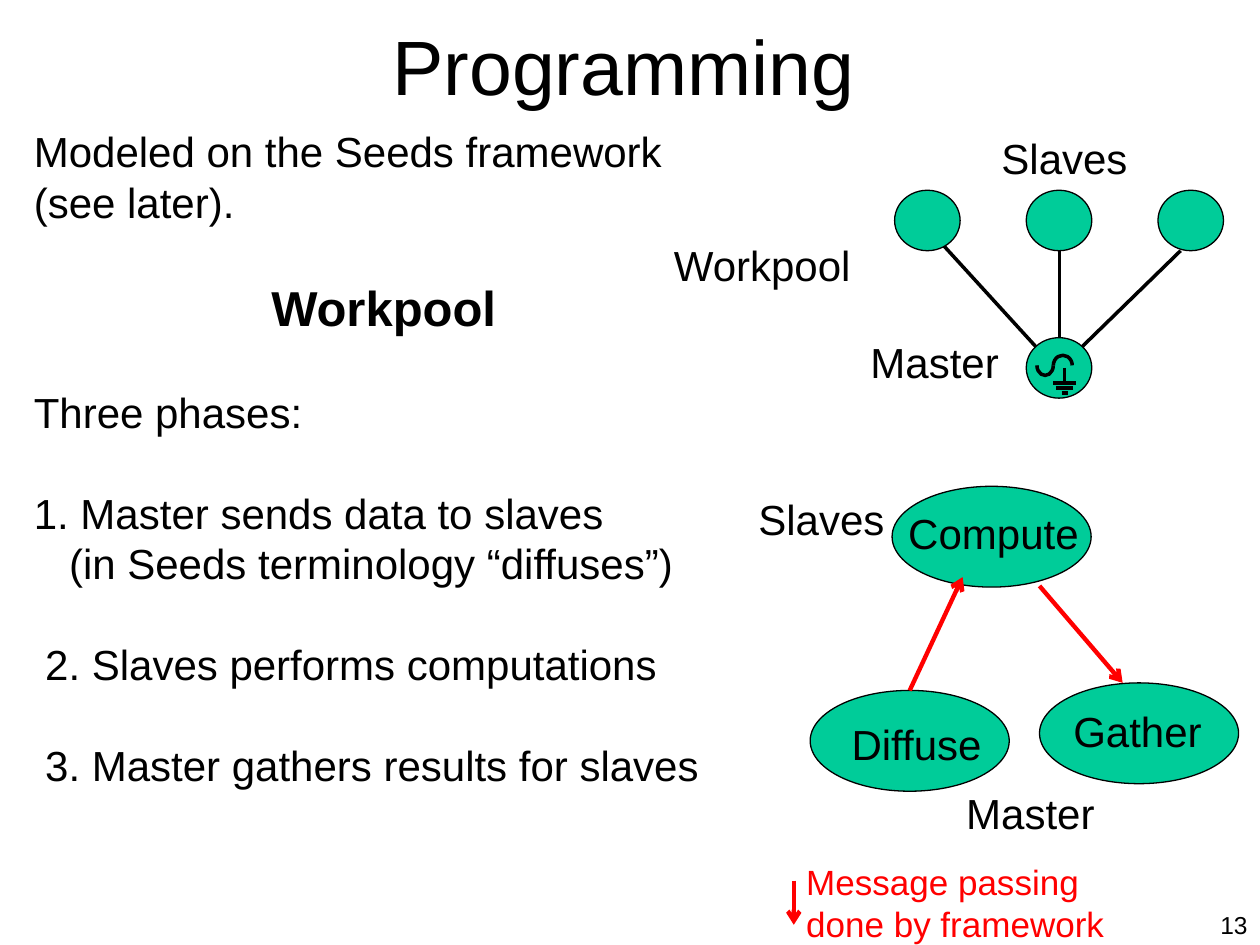
import pptx
import pptx.util
import pptx.dml.color
import pptx.enum.shapes
import pptx.enum.text
import pptx.oxml.ns
from lxml import etree

Inches, Pt = pptx.util.Inches, pptx.util.Pt
SHAPE = pptx.enum.shapes.MSO_SHAPE
ALIGN = pptx.enum.text.PP_ALIGN
ANCHOR = pptx.enum.text.MSO_ANCHOR
qn = pptx.oxml.ns.qn

WIDTH, HEIGHT = 10, 7.5
FONT = "Arial"
BLACK, RED, GREEN = "000000", "FF0000", "00CC99"
LINE_RATIO = 1.2
BODY_SIZE = 24

TITLE = "Programming"
BODY = [
    {"text": "Modeled on the Seeds framework (see later)."},
    {"text": "Workpool", "size": 28, "bold": True, "align": ALIGN.CENTER, "gap": 1},
    {"text": "Three phases:", "gap": 1},
    {"text": "1. Master sends data to slaves", "gap": 1},
    {"text": "(in Seeds terminology “diffuses”)", "indent": 0.28},
    {"text": "2. Slaves performs computations", "indent": 0.09, "gap": 1},
    {"text": "3. Master gathers results for slaves", "indent": 0.09, "gap": 1},
]
LABELS = [
    ("Slaves", 7.85, 1, 1.47),
    ("Workpool", 5.25, 1.85, 1.62),
    ("Master", 6.81, 2.62, 1.32),
    ("Slaves", 5.92, 3.87, 1.21),
    ("Master", 7.57, 6.2, 1.23),
]
PHASES = [
    ("Diffuse", (6.43, 5.48), (6.66, 5.65)),
    ("Compute", (7.08, 3.86), (7.11, 3.98)),
    ("Gather", (8.25, 5.42), (8.42, 5.55)),
]
PHASE_SIZE = (1.58, 0.8)
MESSAGE = "Message passing done by framework"
MESSAGE_ARROWS = [
    ((7.22, 5.48), (7.64, 4.58)),
    ((8.25, 4.65), (8.91, 5.42)),
    ((6.3, 6.99), (6.3, 7.34)),
]
NODE_SIZE = (0.52, 0.48)
NODE_LEFT, NODE_STEP, SLAVE_TOP, MASTER_TOP = 7.1, 1.045, 1.51, 2.68
LINKS = [
    ((7.49, 1.95), (8.22, 2.75)),
    ((8.41, 1.99), (8.41, 2.68)),
    ((9.37, 1.99), (8.59, 2.75)),
]
WAVES = [(8.23, 0.13, (0, 108)), (8.36, 0.15, (108, 0))]
GROUND_X, GROUND_TOP, GROUND_Y, GROUND_STEP = 8.45, 2.92, 3.04, 0.04
GROUND_BARS = [0.18, 0.14, 0.05]


def rgb(value):
    return pptx.dml.color.RGBColor.from_string(value)


def write(p, text, size=BODY_SIZE, color=BLACK, bold=False, align=ALIGN.LEFT, gap=0, indent=0):
    p.alignment = align
    p.line_spacing = Pt(size * LINE_RATIO)
    p.space_before = Pt(gap * BODY_SIZE * LINE_RATIO)
    p.space_after = Pt(0)
    if indent:
        p._p.get_or_add_pPr().set("marL", str(Inches(indent)))
    r = p.add_run()
    r.text = text
    r.font.name, r.font.size, r.font.bold = FONT, Pt(size), bold
    r.font.color.rgb = rgb(color)


def add_text(s, box, paragraphs):
    tf = s.shapes.add_textbox(*map(Inches, box)).text_frame
    tf.word_wrap = True
    for i, item in enumerate(paragraphs):
        write(tf.add_paragraph() if i else tf.paragraphs[0], **item)


def add_ellipse(s, at, size):
    sp = s.shapes.add_shape(SHAPE.OVAL, *map(Inches, (*at, *size)))
    sp.shadow.inherit = False
    sp.fill.solid()
    sp.fill.fore_color.rgb = rgb(GREEN)
    sp.line.color.rgb = rgb(BLACK)
    sp.line.width = Pt(0.75)


def add_arc(s, left, width, angles):
    sp = s.shapes.add_shape(SHAPE.ARC, *map(Inches, (left, 2.82, width, 0.16)))
    sp.shadow.inherit = False
    sp.adjustments[0], sp.adjustments[1] = angles
    sp.fill.background()
    sp.line.color.rgb = rgb(BLACK)
    sp.line.width = Pt(2)


def add_line(s, start, end, color=BLACK, width=2, arrow=False):
    kind = pptx.enum.shapes.MSO_CONNECTOR.STRAIGHT
    sp = s.shapes.add_connector(kind, *map(Inches, (*start, *end)))
    sp.line.color.rgb = rgb(color)
    sp.line.width = Pt(width)
    if arrow:
        etree.SubElement(sp.line._get_or_add_ln(), qn("a:tailEnd"), type="arrow")
    etree.SubElement(sp._element.spPr, qn("a:effectLst"))


def add_title(s):
    sp = s.shapes.title
    sp.left, sp.top, sp.width, sp.height = map(Inches, (0.7, -0.11, 8.5, 1.25))
    sp.text_frame.vertical_anchor = ANCHOR.MIDDLE
    write(sp.text_frame.paragraphs[0], TITLE, size=44, align=ALIGN.CENTER)


def add_workpool(s):
    for start, end in LINKS:
        add_line(s, start, end)
    for i in range(3):
        add_ellipse(s, (NODE_LEFT + i * NODE_STEP, SLAVE_TOP), NODE_SIZE)
    add_ellipse(s, (NODE_LEFT + NODE_STEP, MASTER_TOP), NODE_SIZE)
    for wave in WAVES:
        add_arc(s, *wave)
    add_line(s, (GROUND_X, GROUND_TOP), (GROUND_X, GROUND_Y))
    for i, bar in enumerate(GROUND_BARS):
        y = GROUND_Y + i * GROUND_STEP
        add_line(s, (GROUND_X - bar / 2, y), (GROUND_X + bar / 2, y))


def add_phases(s):
    for text, at, label_at in PHASES:
        add_ellipse(s, at, PHASE_SIZE)
        add_text(s, (*label_at, PHASE_SIZE[0], 0.5), [{"text": text}])
    for start, end in MESSAGE_ARROWS:
        add_line(s, start, end, RED, 2.5, arrow=True)


def main():
    prs = pptx.Presentation()
    prs.slide_width, prs.slide_height = Inches(WIDTH), Inches(HEIGHT)
    s = prs.slides.add_slide(prs.slide_layouts[5])
    add_title(s)
    add_text(s, (0.17, 0.95, 5.75, 6.55), BODY)
    add_workpool(s)
    add_phases(s)
    for text, left, top, width in LABELS:
        add_text(s, (left, top, width, 0.5), [{"text": text}])
    add_text(s, (6.3, 6.78, 2.67, 0.77), [{"text": MESSAGE, "size": 20, "color": RED}])
    add_text(s, (7.92, 7.17, 2.08, 0.5), [{"text": "13", "size": 14, "align": ALIGN.RIGHT}])
    prs.save("out.pptx")


if __name__ == "__main__":
    main()
